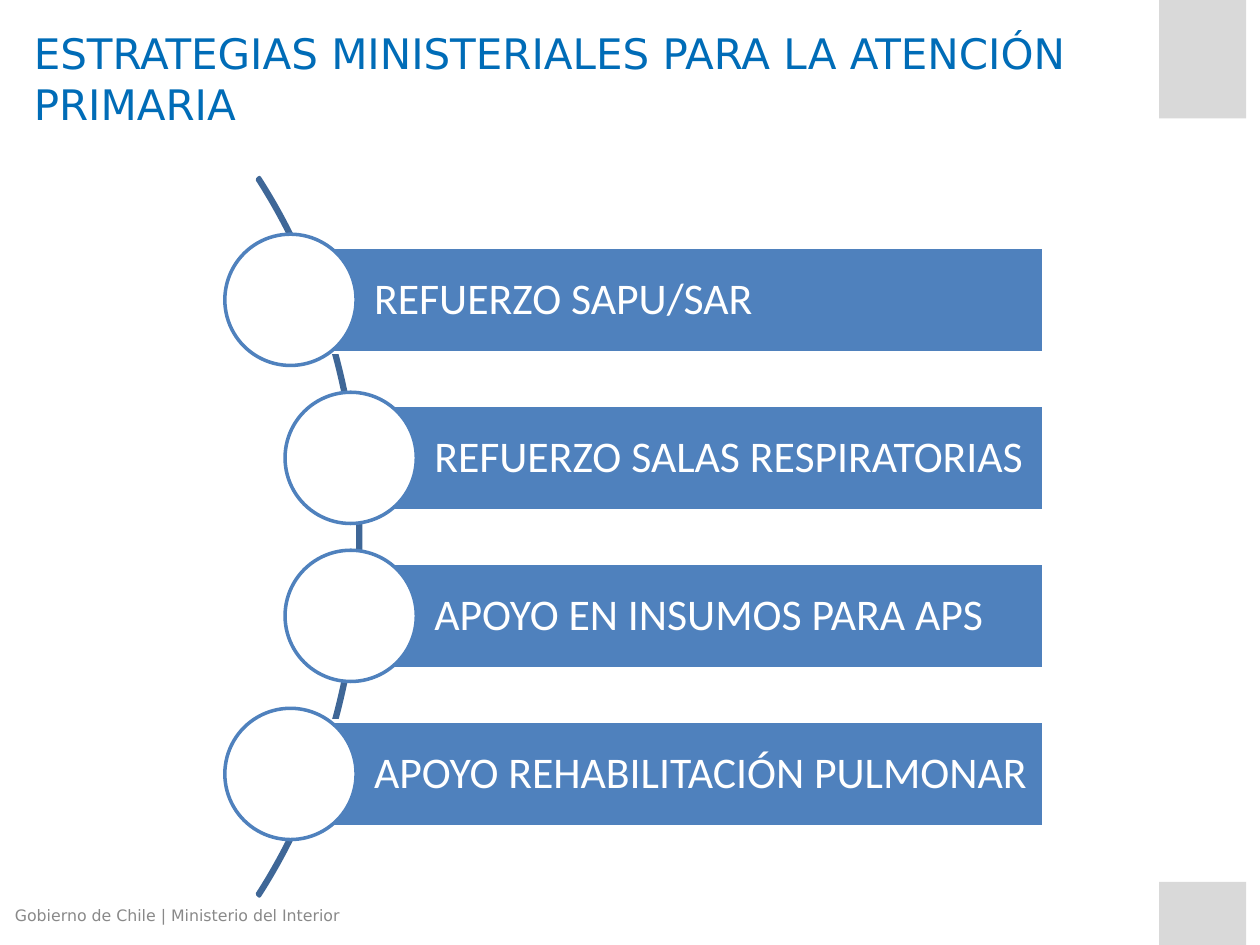
import pptx
import pptx.util
import pptx.dml.color
import pptx.enum.shapes
import pptx.enum.text

Pt = pptx.util.Pt
SHAPE = pptx.enum.shapes.MSO_SHAPE
ANCHOR = pptx.enum.text.MSO_ANCHOR

COLORS = {
    "title": "006CB7",
    "corner": "D9D9D9",
    "footer": "898989",
    "arc": "3F6797",
    "bar": "4F81BD",
    "white": "FFFFFF",
}
STRATEGIES = [
    ("REFUERZO SAPU/SAR", 0),
    ("REFUERZO SALAS RESPIRATORIAS", 34.4),
    ("APOYO EN INSUMOS PARA APS", 34.4),
    ("APOYO REHABILITACIÓN PULMONAR", 0),
]


def color(name):
    """Return the named palette colour."""
    return pptx.dml.color.RGBColor.from_string(COLORS[name])


def draw_shape(slide, preset, box, fill=None, line=None):
    """Add a preset shape with the given fill and outline colours."""
    shape = slide.shapes.add_shape(preset, *(Pt(length) for length in box))
    shape.shadow.inherit = False
    if fill:
        shape.fill.solid()
        shape.fill.fore_color.rgb = color(fill)
    else:
        shape.fill.background()
    if line:
        shape.line.color.rgb = color(line)
        shape.line.width = Pt(2)
    else:
        shape.line.fill.background()
    return shape


def write_text(shape, text, size, font, ink, insets, anchor):
    """Write one left-aligned run into a shape and return its paragraph."""
    frame = shape.text_frame
    frame.word_wrap = True
    frame.vertical_anchor = anchor
    frame.margin_left, frame.margin_top, frame.margin_right, frame.margin_bottom = (
        Pt(inset) for inset in insets
    )
    paragraph = frame.paragraphs[0]
    paragraph.alignment = pptx.enum.text.PP_ALIGN.LEFT
    run = paragraph.add_run()
    run.text = text
    run.font.size = Pt(size)
    run.font.name = font
    run.font.color.rgb = color(ink)
    return paragraph


def add_corner(slide, left, top, width, height):
    """Place a plain block at a corner of the slide."""
    draw_shape(slide, SHAPE.RECTANGLE, (left, top, width, height), "corner")


def add_caption(slide, box, text, size, ink):
    """Place a line of institutional text in its box."""
    caption = slide.shapes.add_textbox(*(Pt(length) for length in box))
    write_text(caption, text, size, "DejaVu Sans", ink, (7.2, 3.6, 7.2, 3.6), ANCHOR.TOP)


def add_strategies(slide, left, top, width, height):
    """Draw the curved list of strategies along its arc."""
    diameter, bar_height = 75, 60.4
    pitch = height / len(STRATEGIES)
    arc_width, arc_height = 526.3, 656
    arc_box = (left - 448.7, top + (height - arc_height) / 2, arc_width, arc_height)
    arc = draw_shape(slide, SHAPE.BLOCK_ARC, arc_box, line="arc")
    for index, value in enumerate((189, 27, 0.003)):
        arc.adjustments[index] = value

    for row, (strategy, indent) in enumerate(STRATEGIES):
        center = top + pitch * (row + 0.5)
        circle_left = left + indent
        bar_left = circle_left + diameter / 2
        bar_box = (bar_left, center - bar_height / 2, left + width - bar_left, bar_height)
        bar = draw_shape(slide, SHAPE.RECTANGLE, bar_box, "bar", "white")
        paragraph = write_text(
            bar, strategy, 25, "Calibri", "white", (47.8, 5, 5, 5), ANCHOR.MIDDLE
        )
        paragraph.line_spacing = 0.9
        circle_box = (circle_left, center - diameter / 2, diameter, diameter)
        draw_shape(slide, SHAPE.OVAL, circle_box, "white", "bar")


def main():
    """Build the slide and save it."""
    deck = pptx.Presentation()
    deck.slide_width, deck.slide_height = Pt(720), Pt(540)
    slide = deck.slides.add_slide(deck.slide_layouts[6])
    add_corner(slide, 662.4, 0, 49.7, 67.7)
    add_corner(slide, 662.4, 504, 49.7, 36)
    add_caption(
        slide, (12.24, 12.24, 643, 90),
        "ESTRATEGIAS MINISTERIALES PARA LA ATENCIÓN PRIMARIA", 24, "title",
    )
    add_caption(
        slide, (1.44, 514, 228.2, 19.4),
        "Gobierno de Chile | Ministerio del Interior", 9, "footer",
    )
    add_strategies(slide, 128.5, 126.2, 468, 361.2)
    deck.save("out.pptx")


if __name__ == "__main__":
    main()
